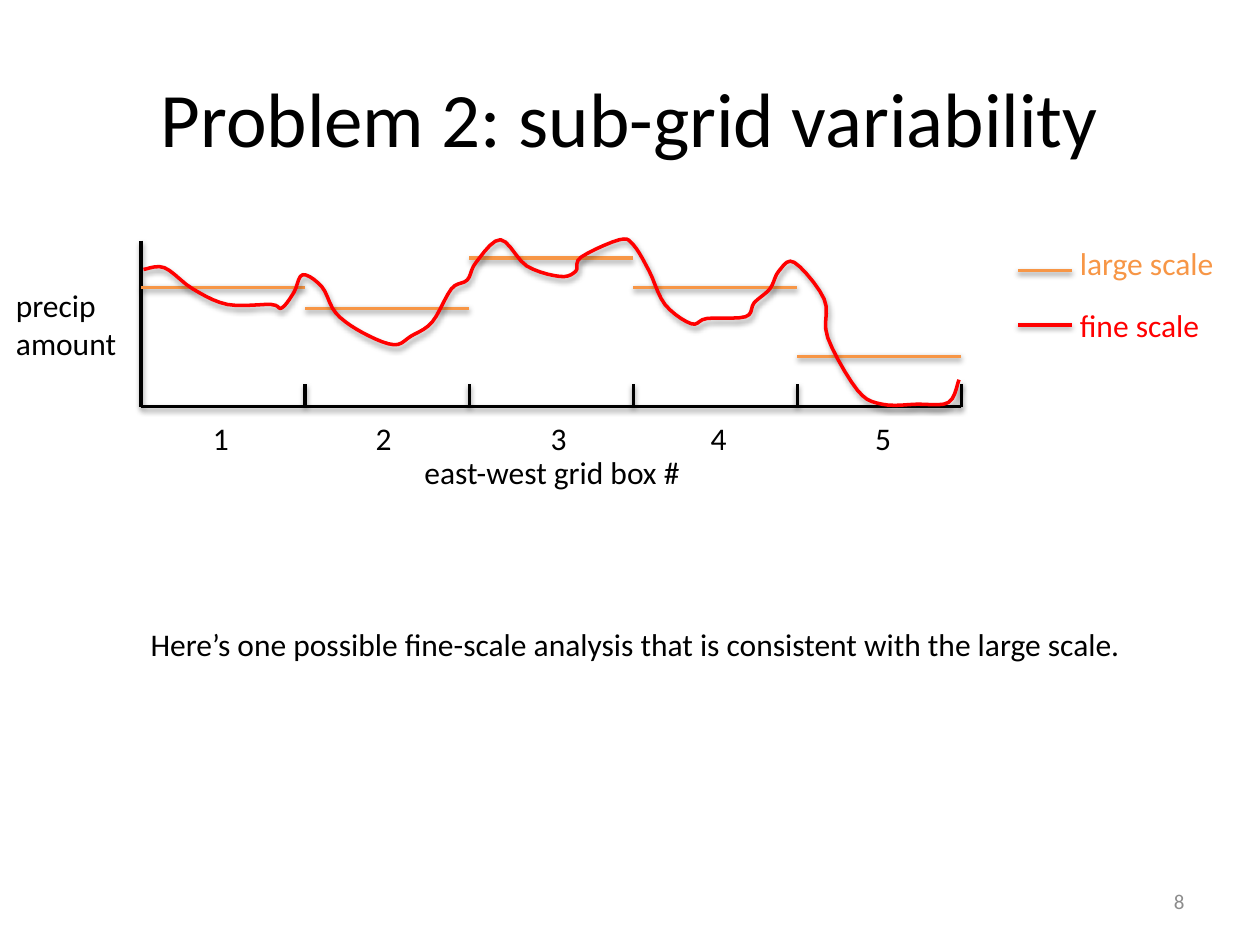
"""Build the slide on sub-grid variability of precipitation."""
import lxml.etree
import pptx
import pptx.dml.color
import pptx.enum.shapes
import pptx.enum.text
import pptx.oxml.ns
import pptx.util

Pt = pptx.util.Pt
ALIGN = pptx.enum.text.PP_ALIGN
ANCHOR = pptx.enum.text.MSO_ANCHOR

COLORS = {"ink": "000000", "large": "F79646", "fine": "FF0000", "number": "8C8C8C"}
LINE_WIDTH = 2
TEXT_HEIGHT = 29

LABELS = [
    (["precip", "amount"], (2, 160, 73), "ink"),
    (["east-west grid box #"], (235.5, 255.5, 163.5), "ink"),
    (["large scale"], (610, 136, 92), "large"),
    (["fine scale"], (610, 171.5, 83.5), "fine"),
    (["Here’s one possible fine-scale analysis that is consistent with the large scale."],
     (79, 353.5, 572.5), "ink"),
]
NUMBER_LEFTS = [114.5, 207.5, 307.5, 399, 493]
NUMBER_TOP = 236

AXIS_LEFT, AXIS_RIGHT, AXIS_TOP, AXIS_BASE = 80.7, 549.4, 137.5, 232.4
TICK_HEIGHT = 12.9
LARGE_SCALE = [164.2, 176.2, 147.5, 164.2, 203.6]
LEGEND_LEFT, LEGEND_RIGHT = 581.8, 612.5
LEGEND = [("large", 154.6), ("fine", 185.6)]

CURVE_STEPS = 5
FINE_SCALE = [
    (82, 154), (94, 153), (110, 165), (130, 174), (155, 174), (161, 176), (168, 167),
    (173, 157), (184, 164), (192, 179), (207, 190), (225, 197), (235, 192),
    (247, 184), (258, 165), (267, 160), (272, 150), (286, 137), (301, 152),
    (320, 158), (329, 155), (332, 147), (354, 137), (362, 140), (371, 155),
    (380, 174), (395, 185), (404, 182), (426, 181), (431, 173), (440, 165),
    (445, 155), (454, 150), (471, 171), (473, 193), (490, 223), (504, 231),
    (524, 231), (542, 230), (548, 217),
]


def rgb(name):
    """Return the named colour."""
    return pptx.dml.color.RGBColor.from_string(COLORS[name])


def add_text(slide, lines, place, color="ink", size=18, align=ALIGN.LEFT,
             anchor=ANCHOR.TOP, wrap=False):
    """Add a text box with one paragraph per line."""
    box = slide.shapes.add_textbox(*map(Pt, place))
    frame = box.text_frame
    frame.word_wrap = wrap
    frame.vertical_anchor = anchor
    if not wrap:
        frame.auto_size = pptx.enum.text.MSO_AUTO_SIZE.SHAPE_TO_FIT_TEXT
    for index, line in enumerate(lines):
        para = frame.add_paragraph() if index else frame.paragraphs[0]
        para.alignment = align
        span = para.add_run()
        span.text = line
        span.font.name = "Calibri"
        span.font.size = Pt(size)
        span.font.color.rgb = rgb(color)


def style_stroke(shape, color):
    """Set the line colour and width, then a soft shadow below."""
    shape.line.color.rgb = rgb(color)
    shape.line.width = Pt(LINE_WIDTH)
    qn = pptx.oxml.ns.qn
    effects = lxml.etree.SubElement(shape._element.spPr, qn("a:effectLst"))
    shadow = lxml.etree.SubElement(
        effects, qn("a:outerShdw"), blurRad=str(Pt(3.1)), dist=str(Pt(1.6)),
        dir=str(90 * 60000), rotWithShape="0")
    tint = lxml.etree.SubElement(shadow, qn("a:srgbClr"), val=COLORS["ink"])
    lxml.etree.SubElement(tint, qn("a:alpha"), val="38000")


def add_line(slide, start, end, color="ink"):
    """Add a straight line between two points."""
    line = slide.shapes.add_connector(
        pptx.enum.shapes.MSO_CONNECTOR.STRAIGHT, *map(Pt, start + end))
    style_stroke(line, color)


def smooth_points(knots):
    """Return points on a Catmull-Rom spline through the knots."""
    padded = [knots[0], *knots, knots[-1]]
    points = [knots[0]]
    for before, start, end, after in zip(padded, padded[1:], padded[2:], padded[3:]):
        for step in range(1, CURVE_STEPS + 1):
            t = step / CURVE_STEPS
            points.append(tuple(
                b + t * (c - a + t * (2 * a - 5 * b + 4 * c - d
                                      + t * (3 * b - a - 3 * c + d))) / 2
                for a, b, c, d in zip(before, start, end, after)))
    return points


def add_curve(slide, knots, color):
    """Add an open, smooth outline through the knots."""
    start, *rest = [(Pt(x), Pt(y)) for x, y in smooth_points(knots)]
    builder = slide.shapes.build_freeform(*start)
    builder.add_line_segments(rest, close=False)
    curve = builder.convert_to_shape()
    curve.fill.background()
    style_stroke(curve, color)


def main():
    """Build and save the deck."""
    deck = pptx.Presentation()
    deck.slide_width, deck.slide_height = Pt(720), Pt(540)
    slide = deck.slides.add_slide(deck.slide_layouts[6])

    add_text(slide, ["Problem 2: sub-grid variability"], (36, 21.6, 648, 90), size=44,
             align=ALIGN.CENTER, anchor=ANCHOR.MIDDLE, wrap=True)
    add_line(slide, (AXIS_LEFT, AXIS_TOP), (AXIS_LEFT, AXIS_BASE))
    add_line(slide, (AXIS_RIGHT, AXIS_BASE), (AXIS_LEFT, AXIS_BASE))
    box_width = (AXIS_RIGHT - AXIS_LEFT) / len(LARGE_SCALE)
    for index, level in enumerate(LARGE_SCALE):
        left = AXIS_LEFT + index * box_width
        right = left + box_width
        add_line(slide, (right, AXIS_BASE - TICK_HEIGHT), (right, AXIS_BASE))
        add_line(slide, (left, level), (right, level), "large")
    for color, y in LEGEND:
        add_line(slide, (LEGEND_LEFT, y), (LEGEND_RIGHT, y), color)
    for lines, (left, top, width), color in LABELS:
        height = TEXT_HEIGHT + 22 * (len(lines) - 1)
        add_text(slide, lines, (left, top, width, height), color)
    for number, left in enumerate(NUMBER_LEFTS, 1):
        add_text(slide, [str(number)], (left, NUMBER_TOP, 23.5, TEXT_HEIGHT))
    add_curve(slide, FINE_SCALE, "fine")
    add_text(slide, ["8"], (516, 500.5, 168, TEXT_HEIGHT), "number", 12,
             ALIGN.RIGHT, ANCHOR.MIDDLE, True)
    deck.save("out.pptx")


if __name__ == "__main__":
    main()
